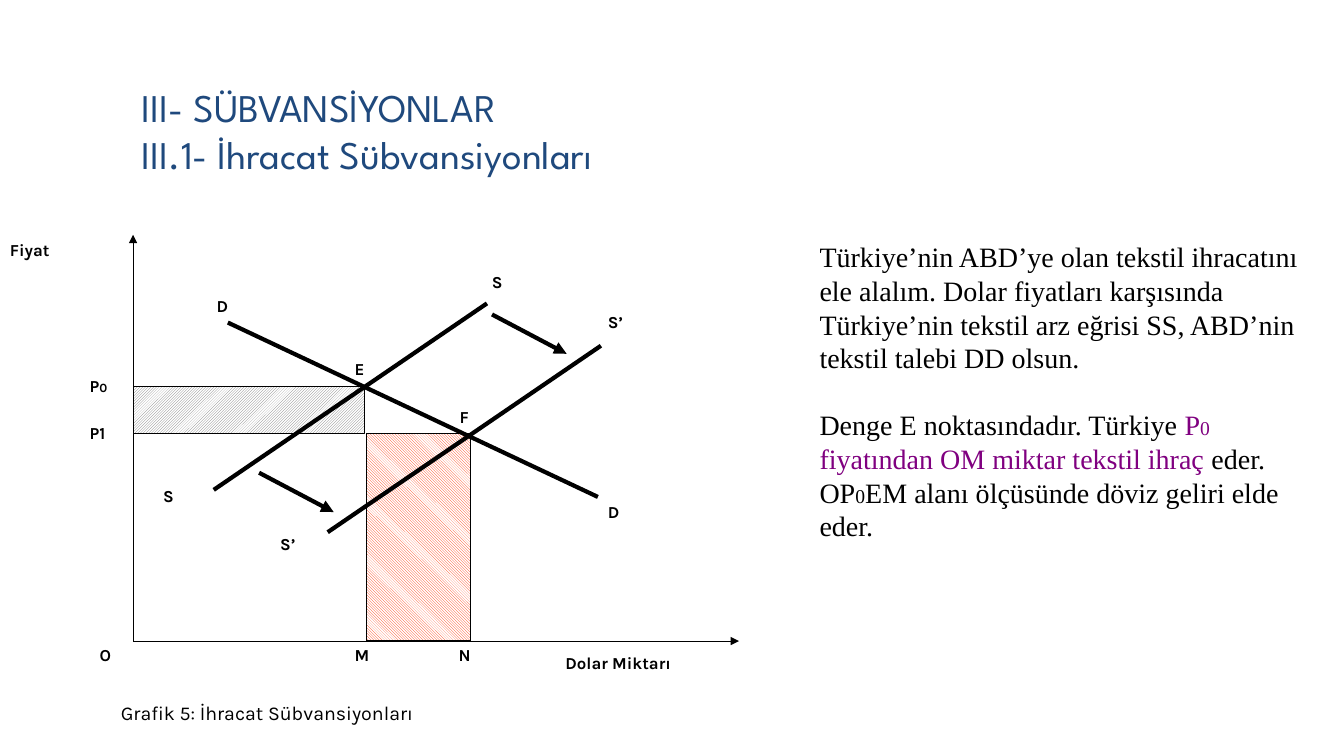
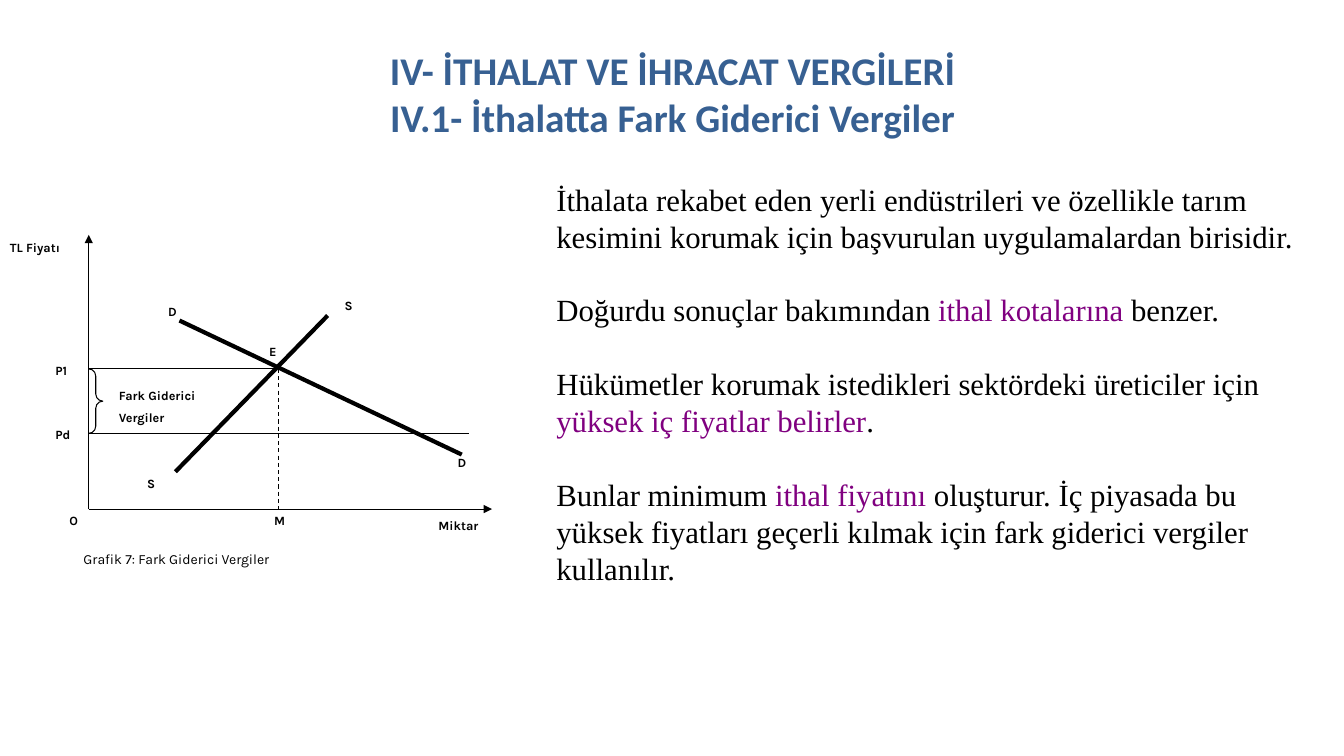
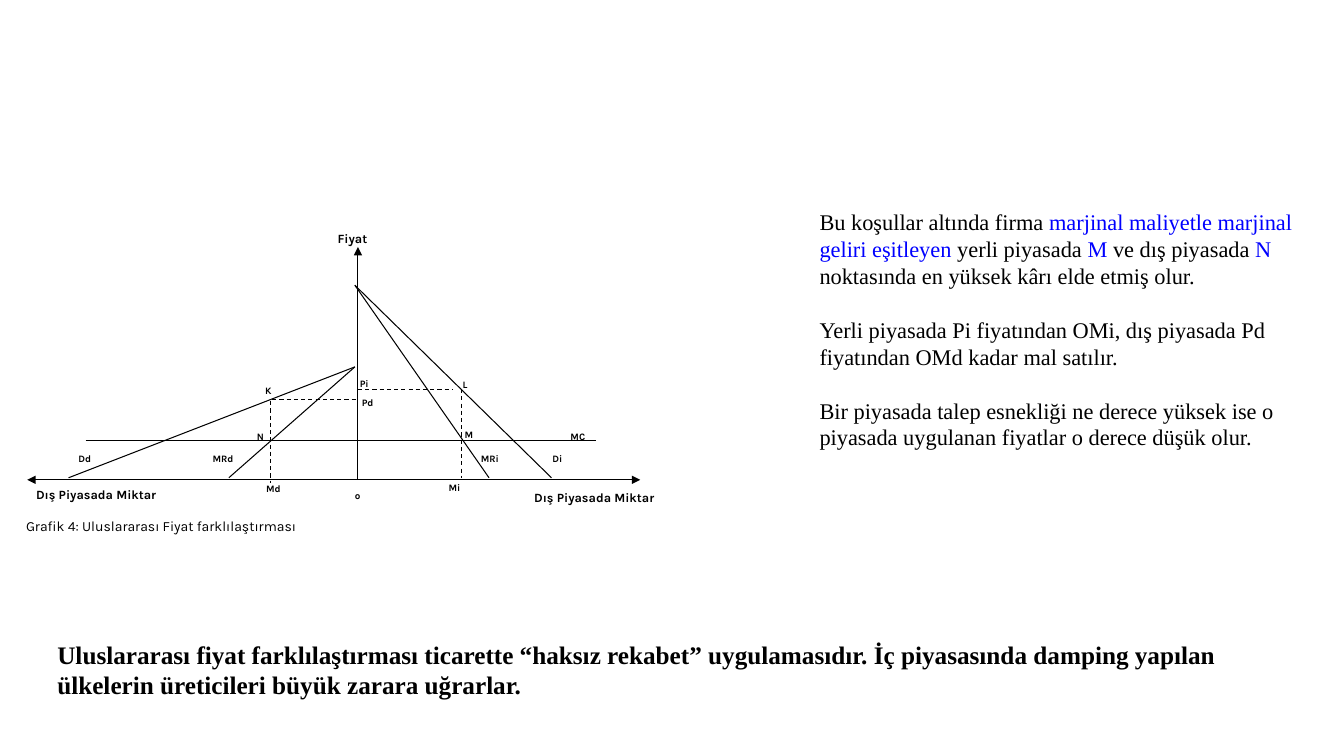
from dataclasses import dataclass
from lxml import etree
from pptx import Presentation
from pptx.dml.color import RGBColor
from pptx.enum import dml, shapes as kinds, text as txt
from pptx.oxml.ns import qn
from pptx.util import Inches, Pt


@dataclass(frozen=True)
class Theme:
    ink: str = "000000"
    white: str = "FFFFFF"
    grey: str = "777777"
    red: str = "FF3300"
    purple: str = "800080"
    blue: str = "0000FF"
    navy: str = "1F497D"
    steel: str = "376092"
    sans: str = "Karla"
    serif: str = "Times New Roman"
    thin: float = 0.75
    thick: float = 3
    title: int = 28
    tiny: int = 7
    small: int = 9
    label: int = 12


@dataclass(frozen=True)
class Box:
    x: float
    y: float
    w: float
    h: float

    def inner(self, dx, dy, w, h):
        return Box(self.x + dx, self.y + dy, w, h)

    def emu(self):
        return [Inches(v) for v in (self.x, self.y, self.w, self.h)]


T = Theme()


def rgb(code):
    return RGBColor.from_string(code)


# Text: a paragraph is a list of pieces, a piece is a string or (string, format)
def write(shapes, box, paras, size=T.label, font=T.sans, color=T.ink, bold=False,
          align=None, anchor=txt.MSO_ANCHOR.TOP, gap=0, grow=True):
    frame = shapes.add_textbox(*box.emu()).text_frame
    frame.word_wrap = True
    frame.vertical_anchor = anchor
    if grow:
        frame.auto_size = txt.MSO_AUTO_SIZE.SHAPE_TO_FIT_TEXT
    for i, pieces in enumerate(paras):
        para = frame.paragraphs[0] if i == 0 else frame.add_paragraph()
        para.alignment = align
        if i:
            para.space_before = Pt(gap)
        for piece in [pieces] if isinstance(pieces, str) else pieces:
            words, own = (piece, {}) if isinstance(piece, str) else piece
            for j, line in enumerate(words.split("\n")):
                if j:
                    para.add_line_break()
                run = para.add_run()
                run.text = line
                run.font.name = font
                run.font.bold = bold
                run.font.size = Pt(own.get("size", size))
                run.font.color.rgb = rgb(own.get("color", color))


def title(shapes, box, words, **fmt):
    write(shapes, box, [words], size=T.title, grow=False, **fmt)


def body(shapes, box, paras, size):
    # One empty line of space between paragraphs
    write(shapes, box, paras, size=size, font=T.serif, gap=1.2 * size)


# Lines and labels, placed from the top left corner of a graph's box
def line(shapes, box, start, end, width=T.thin, dash=False, head=False, tail=False):
    x1, y1, x2, y2 = [Inches(v) for v in (box.x + start[0], box.y + start[1],
                                          box.x + end[0], box.y + end[1])]
    link = shapes.add_connector(kinds.MSO_CONNECTOR.STRAIGHT, x1, y1, x2, y2)
    link.line.width = Pt(width)
    link.line.color.rgb = rgb(T.ink)
    if dash:
        link.line.dash_style = dml.MSO_LINE.DASH
    props = link._element.spPr
    for tag, shown in (("a:headEnd", head), ("a:tailEnd", tail)):
        if shown:
            etree.SubElement(props.find(qn("a:ln")), qn(tag), type="triangle")
    etree.SubElement(props, qn("a:effectLst"))


def lines(shapes, box, pairs, **fmt):
    for start, end in pairs:
        line(shapes, box, start, end, **fmt)


def labels(shapes, box, items, size, w, h):
    for words, dx, dy in items:
        write(shapes, box.inner(dx, dy, w, h), [words], size=size, bold=True)


def axes(shapes, box):
    zero = (0, box.h)
    for end in ((box.w, box.h), (0, 0)):
        line(shapes, box, zero, end, tail=True)


def shape(shapes, box, kind):
    item = shapes.add_shape(kind, *box.emu())
    item.shadow.inherit = False
    item.line.width = Pt(T.thin)
    item.line.color.rgb = rgb(T.ink)
    item.fill.background()
    return item


def hatch(shapes, box, pattern, color):
    fill = shape(shapes, box, kinds.MSO_SHAPE.RECTANGLE).fill
    fill.patterned()
    fill.pattern = pattern
    fill.fore_color.rgb = rgb(color)
    fill.back_color.rgb = rgb(T.white)


def shift(pair, dx, dy):
    return [(x + dx, y + dy) for x, y in pair]


# Graphs
def subsidy(shapes, box):
    axes(shapes, box)
    # Revenue areas
    hatch(shapes, box.inner(0, 1.5, 2.3, 0.47),
          dml.MSO_PATTERN.DARK_UPWARD_DIAGONAL, T.grey)
    hatch(shapes, box.inner(2.32, 1.97, 1.03, 2.06),
          dml.MSO_PATTERN.DARK_DOWNWARD_DIAGONAL, T.red)
    # Demand, then supply before and after the shift
    demand = [(0.94, 0.87), (4.61, 2.6)]
    supply = [(0.8, 2.53), (3.51, 0.68)]
    lines(shapes, box, [demand, supply, shift(supply, 1.13, 0.42)], width=T.thick)
    move = [(3.56, 0.79), (4.3, 1.18)]
    lines(shapes, box, [move, shift(move, -2.31, 1.57)], width=T.thick, tail=True)
    labels(shapes, box, [
        ("S", 3.46, 0.32), ("S’", 4.61, 0.71), ("S", 0.2, 2.44), ("S’", 1.36, 2.92),
        ("D", 0.73, 0.55), ("D", 4.61, 2.6), ("E", 2.1, 1.18), ("F", 3.14, 1.66),
        (["P", ("0", {"size": T.small})], -0.53, 1.35), ("P1", -0.53, 1.81),
        ("O", -0.43, 4.02), ("M", 2.1, 4.02), ("N", 3.13, 4.02)], T.label, 0.74, 0.3)
    labels(shapes, box, [("Fiyat", -1.32, 0), ("Dolar Miktarı", 4.19, 4.1)],
           T.label, 1.89, 0.3)
    write(shapes, box.inner(-0.22, 4.57, 6.09, 0.33),
          ["Grafik 5: İhracat Sübvansiyonları"], size=14)


def levy(shapes, box):
    axes(shapes, box)
    # Supply and demand
    lines(shapes, box, [((0.86, 2.35), (2.37, 0.8)), ((0.9, 0.85), (3.7, 2.18))],
          width=T.thick)
    # Prices and quantity
    high, low, mid = 1.33, 1.97, 1.88
    lines(shapes, box, [((0, high), (mid, high)), ((0, low), (3.77, low))])
    line(shapes, box, (mid, high), (mid, box.h), dash=True)
    brace = shape(shapes, box.inner(0, high, 0.14, low - high),
                  kinds.MSO_SHAPE.RIGHT_BRACE)
    brace.adjustments[0] = 0.51
    labels(shapes, box, [
        ("S", 2.44, 0.58), ("S", 0.48, 2.34), ("D", 0.69, 0.64), ("D", 3.56, 2.13),
        ("E", 1.69, 1.03), ("P1", -0.43, 1.22), ("Pd", -0.43, 1.86),
        ("O", -0.29, 2.71), ("M", 1.74, 2.71)], T.small, 0.49, 0.25)
    labels(shapes, box, [("TL Fiyatı", -0.88, 0), ("Miktar", 3.37, 2.76)],
           T.small, 1.11, 0.25)
    write(shapes, box.inner(0.2, 1.47, 1.33, 0.48), ["Fark Giderici", "Vergiler"],
          size=T.small, bold=True, gap=T.small / 2)
    write(shapes, box.inner(-0.15, 3.08, 4.06, 0.27),
          ["Grafik 7: Fark Giderici Vergiler"], size=10)


def pricing(shapes, box):
    # Axes: one quantity axis for each market
    zero = 3.28
    line(shapes, box, (box.w, box.h), (0, box.h), head=True, tail=True)
    line(shapes, box, (zero, box.h), (zero, 0), tail=True)
    # Demand and marginal revenue fan out from one point in each market
    for peak, feet in (((3.25, 1.19), (0.41, 2)), ((3.25, 0.38), (5.2, 4.58))):
        lines(shapes, box, [(peak, (foot, 2.29)) for foot in feet])
    # Marginal cost
    line(shapes, box, (0.58, 1.92), (5.64, 1.92))
    # Prices and quantities
    lines(shapes, box, [((zero, 1.41), (4.22, 1.41)), ((2.43, 1.51), (zero, 1.51)),
                        ((4.31, 1.41), (4.31, 2.29)), ((2.41, 1.53), (2.41, 2.34))],
          dash=True)
    labels(shapes, box, [
        ("K", 2.26, 1.32), ("L", 4.22, 1.26), ("M", 4.24, 1.75), ("N", 2.18, 1.77),
        ("Pi", 3.2, 1.25), ("Pd", 3.22, 1.44), ("Md", 2.27, 2.29), ("Mi", 4.08, 2.28),
        ("o", 3.15, 2.36), ("Dd", 0.41, 1.99), ("MRd", 1.74, 1.99),
        ("MRi", 4.4, 1.99), ("Di", 5.11, 1.99), ("MC", 5.29, 1.77)], T.tiny, 0.58, 0.2)
    labels(shapes, box, [("Fiyat", 2.98, -0.21), ("Dış Piyasada Miktar", -0.01, 2.33),
                         ("Dış Piyasada Miktar", 4.93, 2.36)], T.small, 1.76, 0.23)
    write(shapes, box.inner(-0.11, 2.63, 6.07, 0.25),
          ["Grafik 4: Uluslararası Fiyat farklılaştırması"], size=10)


# Slides
def export(shapes):
    subsidy(shapes, Box(1.32, 2.33, 6.01, 4.03))
    hue = {"color": T.purple}
    body(shapes, Box(8.03, 2.33, 5.04, 3.77), [
        "Türkiye’nin ABD’ye olan tekstil ihracatını ele alalım. Dolar fiyatları "
        "karşısında Türkiye’nin tekstil arz eğrisi SS, ABD’nin tekstil talebi DD olsun.",
        ["Denge E noktasındadır. Türkiye ", ("P", hue), ("0", {**hue, "size": 14}),
         (" fiyatından OM miktar tekstil ihraç", hue), " eder. OP", ("0", {"size": 14}),
         "EM alanı ölçüsünde döviz geliri elde eder."]], 20)
    title(shapes, Box(1.31, 0.21, 11.36, 1.6),
          "III- SÜBVANSİYONLAR\nIII.1- İhracat Sübvansiyonları",
          font="League Spartan", color=T.navy, anchor=txt.MSO_ANCHOR.BOTTOM)


def duties(shapes):
    title(shapes, Box(0.67, 0.3, 12, 1.25),
          "IV- İTHALAT VE İHRACAT VERGİLERİ\nIV.1- İthalatta Fark Giderici Vergiler",
          font="Calibri", color=T.steel, bold=True, align=txt.PP_ALIGN.CENTER,
          anchor=txt.MSO_ANCHOR.MIDDLE)
    levy(shapes, Box(0.88, 2.33, 4, 2.72))
    hue = {"color": T.purple}
    body(shapes, Box(5.42, 1.74, 7.66, 4.17), [
        "İthalata rekabet eden yerli endüstrileri ve özellikle tarım kesimini korumak "
        "için başvurulan uygulamalardan birisidir.",
        ["Doğurdu sonuçlar bakımından ", ("ithal kotalarına", hue), " benzer."],
        ["Hükümetler korumak istedikleri sektördeki üreticiler için ",
         ("yüksek iç fiyatlar belirler", hue), "."],
        ["Bunlar minimum ", ("ithal fiyatını", hue),
         " oluşturur. İç piyasada bu yüksek fiyatları geçerli kılmak için fark "
         "giderici vergiler kullanılır."]], 22)


def dumping(shapes):
    pricing(shapes.add_group_shape().shapes, Box(0.27, 2.45, 6.08, 2.31))
    hue = {"color": T.blue}
    body(shapes, Box(8.03, 2.02, 5.04, 2.52), [
        ["Bu koşullar altında firma ",
         ("marjinal maliyetle marjinal geliri eşitleyen", hue), " yerli piyasada ",
         ("M", hue), " ve dış piyasada ", ("N", hue),
         " noktasında en yüksek kârı elde etmiş olur."],
        "Yerli piyasada Pi fiyatından OMi, dış piyasada Pd fiyatından OMd kadar mal "
        "satılır.",
        "Bir piyasada talep esnekliği ne derece yüksek ise o piyasada uygulanan "
        "fiyatlar o derece düşük olur."], 16)
    write(shapes, Box(0.47, 6.29, 12.18, 0.71), [
        "Uluslararası fiyat farklılaştırması ticarette “haksız rekabet” uygulamasıdır. "
        "İç piyasasında damping yapılan ülkelerin üreticileri büyük zarara uğrarlar."],
        size=18, font=T.serif, bold=True)


def main():
    deck = Presentation()
    deck.slide_width, deck.slide_height = Inches(13.33), Inches(7.5)
    for build in (export, duties, dumping):
        build(deck.slides.add_slide(deck.slide_layouts[6]).shapes)
    deck.save("out.pptx")


if __name__ == "__main__":
    main()
